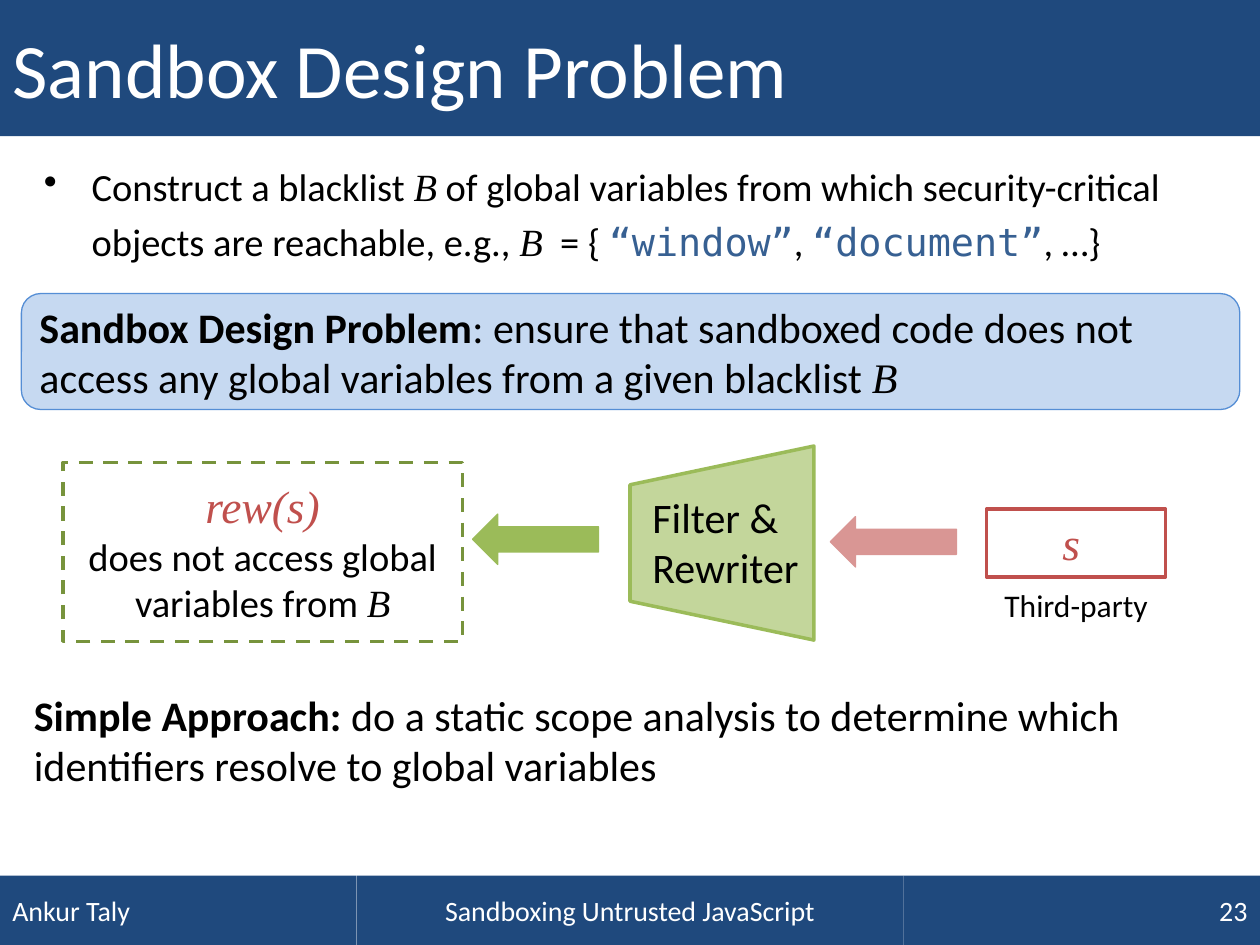
from lxml import etree
from pptx import Presentation
from pptx.dml.color import RGBColor
from pptx.enum import dml, shapes, text
from pptx.oxml.ns import qn
from pptx.util import Inches, Pt

SHAPE = shapes.MSO_SHAPE
ALIGN = text.PP_ALIGN
MIDDLE, TOP = text.MSO_ANCHOR.MIDDLE, text.MSO_ANCHOR.TOP

NAVY, WHITE, BLACK = "1F497D", "FFFFFF", "000000"
GREEN, RED, PINK = "9BBB59", "C0504D", "D99694"
SANS, SERIF, MONO = "Calibri", "Times New Roman", "DejaVu Sans Mono"

PLAIN = {}
BOLD = {"bold": True}
VARIABLE = {"name": SERIF, "italic": True}
CODE = {"name": MONO, "color": "376092"}
PROGRAM = {**VARIABLE, "color": RED, "size": 26}


def rgb(value):
    return RGBColor.from_string(value)


def style_font(font, name=None, size=None, color=None, bold=None, italic=None):
    if name:
        font.name = name
    if size:
        font.size = Pt(size)
    if color:
        font.color.rgb = rgb(color)
    if bold is not None:
        font.bold = bold
    if italic is not None:
        font.italic = italic


def write(shape, paragraphs, size, color=BLACK, align=ALIGN.LEFT, anchor=TOP):
    """Fill a shape with paragraphs, each a list of (words, style) runs."""
    frame = shape.text_frame
    frame.word_wrap = True
    frame.vertical_anchor = anchor
    for index, runs in enumerate(paragraphs):
        paragraph = frame.add_paragraph() if index else frame.paragraphs[0]
        paragraph.alignment = align
        style_font(paragraph.font, SANS, size, color)
        for words, style in runs:
            run = paragraph.add_run()
            run.text = words
            style_font(run.font, **style)


def box(left, top, width, height):
    return [Inches(value) for value in (left, top, width, height)]


def add_block(slide, kind, place, fill=None, line=None, weight=0.75, rotation=0):
    block = slide.shapes.add_shape(kind, *box(*place))
    block.shadow.inherit = False
    block.rotation = rotation
    if fill:
        block.fill.solid()
        block.fill.fore_color.rgb = rgb(fill)
    else:
        block.fill.background()
    if line:
        block.line.color.rgb = rgb(line)
        block.line.width = Pt(weight)
    else:
        block.line.fill.background()
    return block


def add_words(slide, place, runs, size, align=ALIGN.LEFT):
    words = slide.shapes.add_textbox(*box(*place))
    write(words, [runs], size, align=align)
    return words


def add_title(slide, place, words):
    title = slide.shapes.title
    title.left, title.top, title.width, title.height = box(*place)
    title.fill.solid()
    title.fill.fore_color.rgb = rgb(NAVY)
    write(title, [[(words, PLAIN)]], 44, WHITE, anchor=MIDDLE)


def add_footer(slide, left, top, width, height):
    side = 2.83
    middle = width - 2 * side
    parts = [
        ("Ankur Taly", side, ALIGN.LEFT),
        ("Sandboxing Untrusted JavaScript", middle, ALIGN.CENTER),
        ("23", side, ALIGN.RIGHT),
    ]
    for words, part_width, align in parts:
        part = add_block(slide, SHAPE.RECTANGLE, (left, top, part_width, height), NAVY)
        write(part, [[(words, PLAIN)]], 16, WHITE, align, MIDDLE)
        left += part_width


def add_blacklist_bullet(slide, place):
    bullet = add_words(slide, place, [
        ("Construct a blacklist ", PLAIN),
        ("B", VARIABLE),
        (" of global variables from which security-critical objects are reachable, e.g., ", PLAIN),
        ("B", VARIABLE),
        ("  = { ", PLAIN),
        ("“window”", CODE),
        (", ", PLAIN),
        ("“document”", CODE),
        (", …}", PLAIN),
    ], 22)
    paragraph = bullet.text_frame.paragraphs[0]
    paragraph.line_spacing = 1.2
    paragraph.space_before = Pt(4.4)
    properties = paragraph._p.get_or_add_pPr()
    properties.set("marL", str(Inches(0.38)))
    properties.set("indent", str(-Inches(0.38)))
    mark = etree.Element(qn("a:buChar"), char="•")
    properties.find(qn("a:defRPr")).addprevious(mark)


def add_problem(slide, place):
    problem = add_block(slide, SHAPE.ROUNDED_RECTANGLE, place, "C6D9F1", "558ED5")
    write(problem, [[
        ("Sandbox Design Problem", BOLD),
        (": ensure that sandboxed code does not access any global variables"
         " from a given blacklist ", PLAIN),
        ("B", VARIABLE),
    ]], 24, anchor=MIDDLE)


def add_rewriting_flow(slide, left, top):
    """Third-party code flows leftwards through the rewriter."""
    def at(x, y, width, height):
        return left + x, top + y, width, height

    add_block(slide, SHAPE.FLOWCHART_MANUAL_OPERATION, at(4.46, 0, 1.54, 1.46),
              "C3D69B", GREEN, 2, 90)
    add_words(slide, at(4.58, 0.27, 1.56, 0.9), [("Filter & Rewriter", PLAIN)], 24)

    for x, y, color in [(6.09, 0.52, PINK), (3.25, 0.5, GREEN)]:
        add_block(slide, SHAPE.RIGHT_ARROW, at(x, y, 1, 0.4), color, color, rotation=180)

    source = add_block(slide, SHAPE.RECTANGLE, at(7.33, 0.46, 1.42, 0.54),
                       line=RED, weight=2)
    write(source, [[("s", PROGRAM), (" ", PLAIN)]], 24, align=ALIGN.CENTER)
    add_words(slide, at(7.33, 1.02, 1.42, 0.4), [("Third-party", PLAIN)], 18, ALIGN.CENTER)

    rewritten = add_block(slide, SHAPE.RECTANGLE, at(0, 0.09, 3.17, 1.42),
                          WHITE, "77933C", 2)
    rewritten.line.dash_style = dml.MSO_LINE.DASH
    write(rewritten, [
        [("rew(s)", PROGRAM)],
        [("does not access global variables from ", PLAIN), ("B", VARIABLE)],
    ], 22, align=ALIGN.CENTER, anchor=MIDDLE)


def main():
    deck = Presentation()
    deck.slide_width, deck.slide_height = Inches(10), Inches(7.5)
    slide = deck.slides.add_slide(deck.slide_layouts.get_by_name("Title Only"))
    add_title(slide, (0, 0, 10, 1.08), "Sandbox Design Problem")
    add_blacklist_bullet(slide, (0.25, 1.17, 9.5, 0.92))
    add_problem(slide, (0.17, 2.33, 9.67, 0.92))
    add_rewriting_flow(slide, 0.5, 3.58)
    add_words(slide, (0.17, 5.42, 9.58, 0.91), [
        ("Simple Approach: ", BOLD),
        ("do a static scope analysis to determine which identifiers"
         " resolve to global variables", PLAIN),
    ], 24)
    add_footer(slide, 0, 6.95, 10, 0.55)
    deck.save("out.pptx")


if __name__ == "__main__":
    main()
